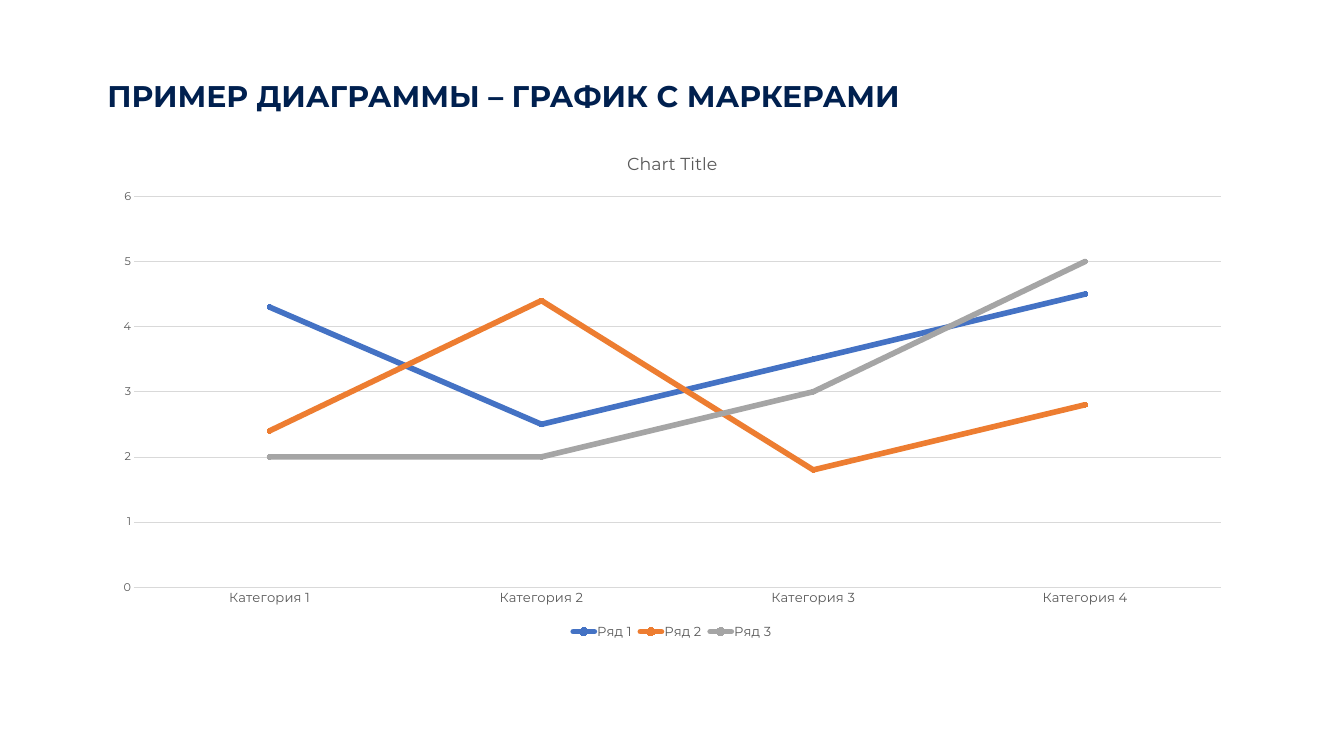
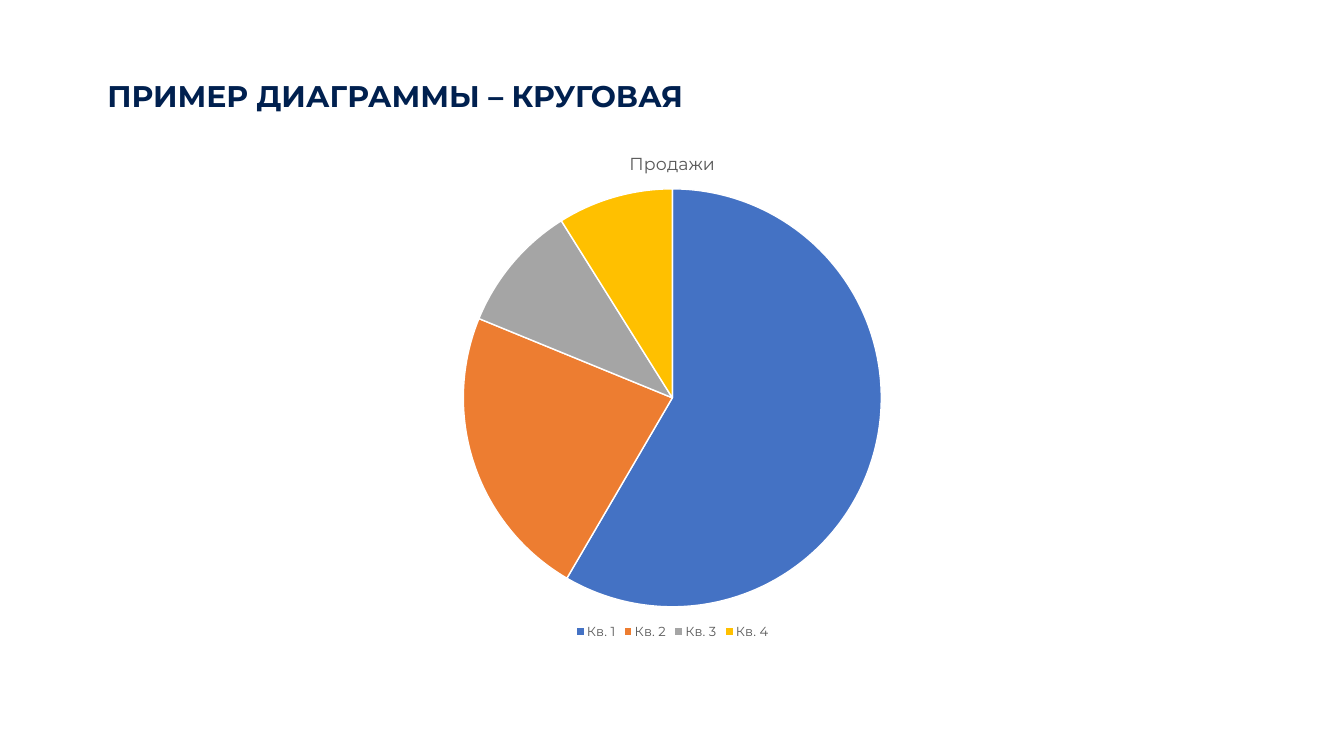
from pptx import Presentation
from pptx.chart.data import CategoryChartData
from pptx.dml.color import RGBColor
from pptx.enum.chart import XL_CHART_TYPE, XL_LEGEND_POSITION, XL_MARKER_STYLE, XL_TICK_MARK
from pptx.enum.text import MSO_ANCHOR
from pptx.util import Inches, Pt

LINE, PIE = XL_CHART_TYPE.LINE_MARKERS, XL_CHART_TYPE.PIE
BOTTOM, CIRCLE, NO_TICK = XL_LEGEND_POSITION.BOTTOM, XL_MARKER_STYLE.CIRCLE, XL_TICK_MARK.NONE
MIDDLE = MSO_ANCHOR.MIDDLE

FONT = "Montserrat"
NAVY, GREY, GRID, WHITE = "00204F", "595959", "D9D9D9", "FFFFFF"
PALETTE = ["4472C4", "ED7D31", "A5A5A5", "FFC000"]

WIDTH, HEIGHT, LEFT = 20, 11.25, 1.5
TITLE_BOX = (LEFT, 0.9, 17.28, 1.1)
CHART_BOX = (LEFT, 2, 17.01, 7.56)

SLIDES = [
    {
        "title": "ПРИМЕР ДИАГРАММЫ – ГРАФИК С МАРКЕРАМИ",
        "type": LINE,
        "chart_title": "Chart Title",
        "categories": ["Категория 1", "Категория 2", "Категория 3", "Категория 4"],
        "series": {
            "Ряд 1": [4.3, 2.5, 3.5, 4.5],
            "Ряд 2": [2.4, 4.4, 1.8, 2.8],
            "Ряд 3": [2, 2, 3, 5],
        },
    },
    {
        "title": "ПРИМЕР ДИАГРАММЫ – КРУГОВАЯ",
        "type": PIE,
        "chart_title": "Продажи",
        "categories": ["Кв. 1", "Кв. 2", "Кв. 3", "Кв. 4"],
        "series": {"Продажи": [59, 23, 10, 9]},
    },
]


def rgb(color):
    return RGBColor.from_string(color)


def style_font(font, size, color, bold=False):
    font.name, font.size, font.bold = FONT, Pt(size), bold
    font.color.rgb = rgb(color)


def set_fill(fill, color):
    fill.solid()
    fill.fore_color.rgb = rgb(color)


def set_line(line, color, width):
    set_fill(line.fill, color)
    line.width = Pt(width)


def add_run(tf, text, size, color, bold=False):
    p = tf.paragraphs[0]
    r = p.add_run()
    r.text = text
    style_font(r.font, size, color, bold)
    return p


def add_title(slide, text):
    tf = slide.shapes.add_textbox(*map(Inches, TITLE_BOX)).text_frame
    tf.word_wrap = True
    tf.vertical_anchor = MIDDLE
    add_run(tf, text, 32, NAVY, True).line_spacing = 0.9


def style_line_chart(chart):
    for axis, size in ((chart.category_axis, 14), (chart.value_axis, 12)):
        axis.major_tick_mark = axis.minor_tick_mark = NO_TICK
        style_font(axis.tick_labels.font, size, GREY)
    set_line(chart.category_axis.format.line, GRID, 0.75)
    values = chart.value_axis
    values.minimum_scale, values.maximum_scale, values.major_unit = 0, 6, 1
    values.format.line.fill.background()
    set_line(values.major_gridlines.format.line, GRID, 0.75)
    for series, color in zip(chart.plots[0].series, PALETTE):
        series.smooth = False
        line = series.format.line
        set_line(line, color, 6)
        line._get_or_add_ln().set("cap", "rnd")
        marker = series.marker
        marker.style, marker.size = CIRCLE, 5
        set_fill(marker.format.fill, color)
        set_line(marker.format.line, color, 0.75)


def style_pie_chart(chart):
    series = chart.plots[0].series[0]
    for i, color in enumerate(PALETTE):
        fmt = series.points[i].format
        set_fill(fmt.fill, color)
        set_line(fmt.line, WHITE, 1.5)


def add_chart(slide, content):
    data = CategoryChartData()
    data.categories = content["categories"]
    for name, values in content["series"].items():
        data.add_series(name, values)
    chart = slide.shapes.add_chart(content["type"], *map(Inches, CHART_BOX), data).chart
    style_font(chart.font, 10, "000000")
    add_run(chart.chart_title.text_frame, content["chart_title"], 18.6, GREY)
    chart.chart_title.include_in_layout = False
    chart.has_legend = True
    chart.legend.position = BOTTOM
    chart.legend.include_in_layout = False
    style_font(chart.legend.font, 14, GREY)
    chart.plots[0].vary_by_categories = content["type"] == PIE
    if content["type"] == PIE:
        style_pie_chart(chart)
    else:
        style_line_chart(chart)


def main():
    prs = Presentation()
    prs.slide_width, prs.slide_height = Inches(WIDTH), Inches(HEIGHT)
    for content in SLIDES:
        slide = prs.slides.add_slide(prs.slide_layouts[6])
        set_fill(slide.background.fill, WHITE)
        add_title(slide, content["title"])
        add_chart(slide, content)
    prs.save("out.pptx")


if __name__ == "__main__":
    main()
